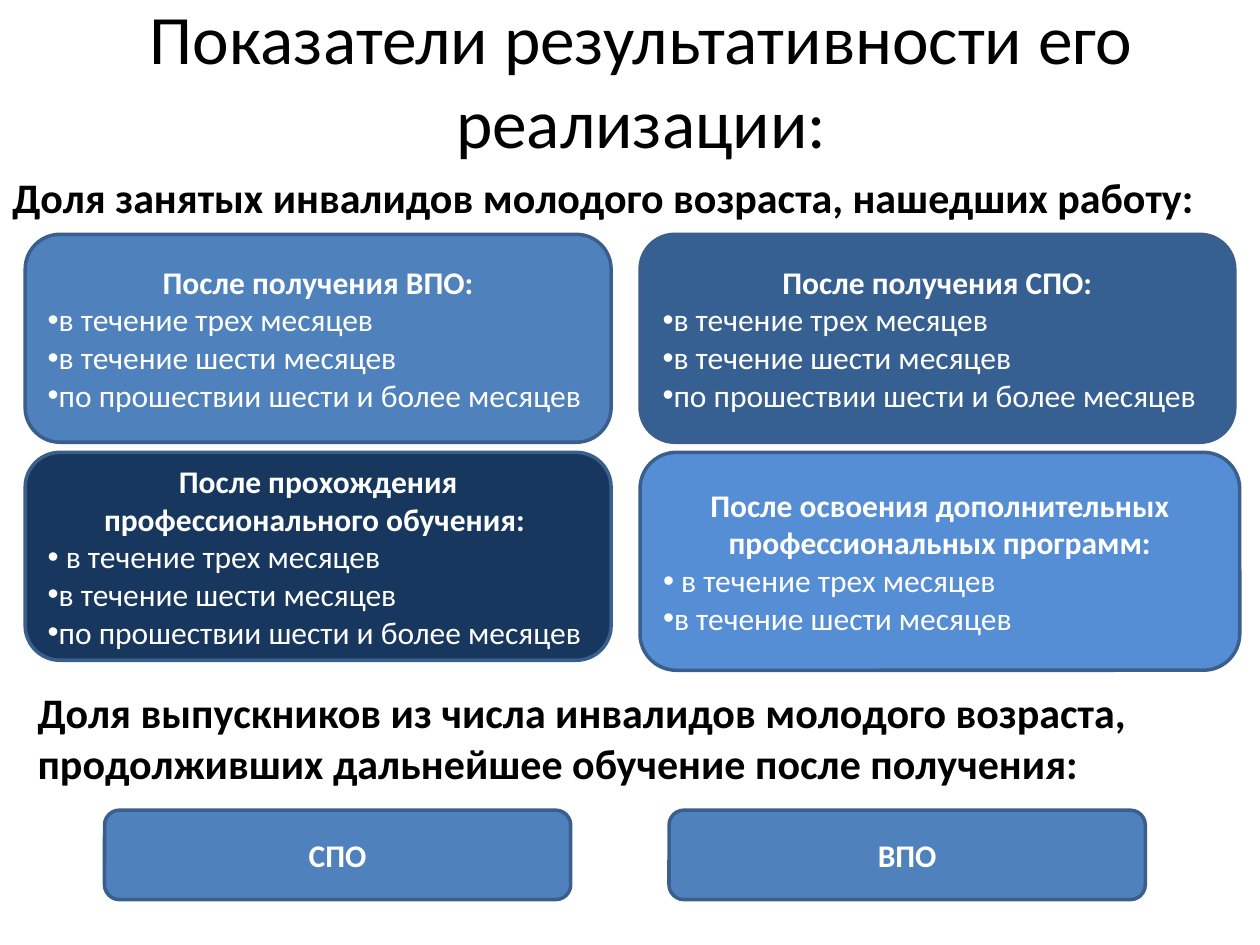
import pptx
import pptx.util
import pptx.dml.color
import pptx.enum.shapes
import pptx.enum.text
import lxml.etree
from pptx.util import Inches

COLORS = {
    "text": "000000", "light": "FFFFFF", "outline": "3A5F8C", "blue": "4F81BD",
    "steel": "376092", "navy": "17375E", "sky": "558ED5",
}
FONT = "Calibri"
TITLE = "Показатели результативности его реализации:"
HEADINGS = [
    ("Доля занятых инвалидов молодого возраста, нашедших работу:",
     (0, 1.31, 9.73, 0.5), False),
    ("Доля выпускников из числа инвалидов молодого возраста, "
     "продолживших дальнейшее обучение после получения:",
     (0.2, 5.4, 8.9, 0.91), True),
]
THREE, SIX, LATER = (
    "в течение трех месяцев", "в течение шести месяцев",
    "по прошествии шести и более месяцев",
)
COLUMNS = (0.2, 5.08)
ROWS = (1.86, 3.59)
CARDS = [
    ("После получения ВПО:", [THREE, SIX, LATER], "blue", (4.65, 1.65)),
    ("После получения СПО:", [THREE, SIX, LATER], "steel", (4.72, 1.65)),
    ("После прохождения профессионального обучения: ",
     [" " + THREE, SIX, LATER], "navy", (4.65, 1.65)),
    ("После освоения дополнительных профессиональных программ:",
     [" " + THREE, SIX], "sky", (4.76, 1.73)),
]
LEVELS = [("СПО", (0.83, 6.43, 3.7, 0.71)), ("ВПО", (5.31, 6.43, 3.78, 0.71))]


def rgb(name):
    return pptx.dml.color.RGBColor.from_string(COLORS[name])


def style(paragraph, size, color, bold=False, align="LEFT"):
    paragraph.alignment = pptx.enum.text.PP_ALIGN[align]
    font = paragraph.font
    font.name, font.size, font.bold = FONT, pptx.util.Pt(size), bold
    font.color.rgb = rgb(color)


def add_bullet(paragraph):
    properties = paragraph._p.get_or_add_pPr()
    namespace = pptx.oxml.ns.qn("a:buFont")
    lxml.etree.SubElement(properties, namespace, typeface="Arial")
    lxml.etree.SubElement(properties, pptx.oxml.ns.qn("a:buChar"), char="•")


def add_heading(slide, text, box, wrap):
    frame = slide.shapes.add_textbox(*map(Inches, box)).text_frame
    frame.word_wrap = wrap
    frame.auto_size = pptx.enum.text.MSO_AUTO_SIZE.SHAPE_TO_FIT_TEXT
    frame.text = text
    style(frame.paragraphs[0], 24, "text", bold=True)


def add_card(slide, heading, items, fill, box):
    card = slide.shapes.add_shape(
        pptx.enum.shapes.MSO_SHAPE.ROUNDED_RECTANGLE, *map(Inches, box))
    card.shadow.inherit = False
    card.fill.solid()
    card.fill.fore_color.rgb = rgb(fill)
    card.line.color.rgb = rgb("outline")
    card.line.width = pptx.util.Pt(2)
    frame = card.text_frame
    frame.word_wrap = True
    frame.vertical_anchor = pptx.enum.text.MSO_ANCHOR.MIDDLE
    frame.text = heading
    style(frame.paragraphs[0], 18, "light", bold=True, align="CENTER")
    for item in items:
        paragraph = frame.add_paragraph()
        paragraph.text = item
        add_bullet(paragraph)
        style(paragraph, 18, "light")


def main():
    """Build the slide of performance indicators."""
    deck = pptx.Presentation()
    deck.slide_width, deck.slide_height = Inches(10), Inches(7.5)
    slide = deck.slides.add_slide(deck.slide_layouts[5])

    title = slide.shapes.title
    title.left, title.top = Inches(0.59), Inches(0)
    title.width, title.height = Inches(9), Inches(1.25)
    title.text_frame.text = TITLE
    title.text_frame.word_wrap = True
    title.text_frame.auto_size = pptx.enum.text.MSO_AUTO_SIZE.NONE
    title.text_frame.vertical_anchor = pptx.enum.text.MSO_ANCHOR.MIDDLE
    style(title.text_frame.paragraphs[0], 39.6, "text", align="CENTER")

    for heading in HEADINGS:
        add_heading(slide, *heading)
    for index, (heading, items, fill, size) in enumerate(CARDS):
        row, column = divmod(index, len(COLUMNS))
        add_card(slide, heading, items, fill, (COLUMNS[column], ROWS[row], *size))
    for level, box in LEVELS:
        add_card(slide, level, [], "blue", box)

    deck.save("out.pptx")


if __name__ == "__main__":
    main()
